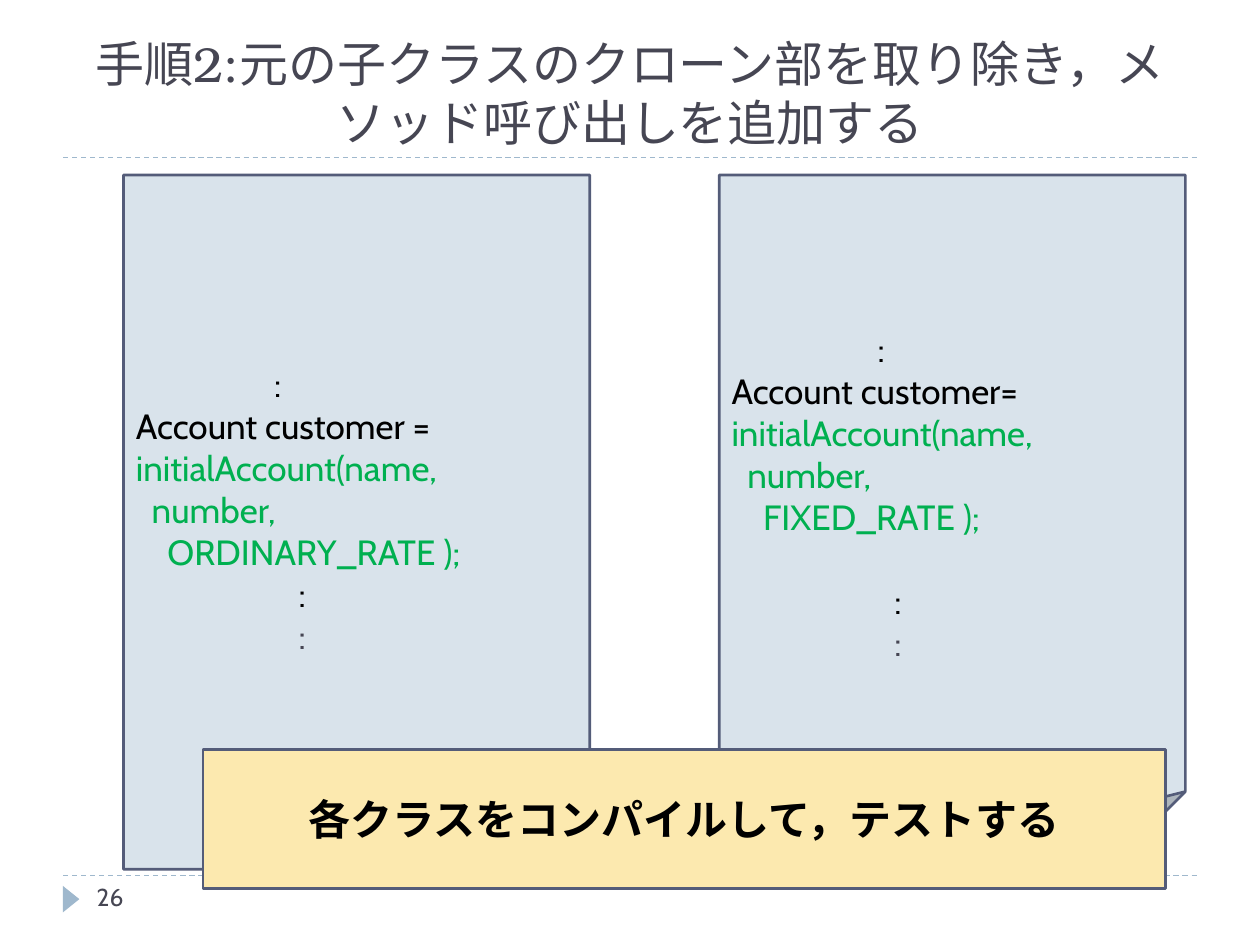
from dataclasses import dataclass

from lxml.etree import SubElement
from pptx import Presentation
from pptx.dml.color import RGBColor
from pptx.enum.dml import MSO_LINE
from pptx.enum.shapes import MSO_CONNECTOR, MSO_SHAPE
from pptx.enum.text import MSO_ANCHOR, PP_ALIGN
from pptx.oxml.ns import qn
from pptx.util import Pt


@dataclass(frozen=True)
class Theme:
    heading_font: str = "TeX Gyre Bonum"
    body_font: str = "Cabin"
    title_size: int = 28
    banner_size: int = 24
    code_size: int = 20
    number_size: int = 14
    text: str = "464653"
    black: str = "000000"
    call: str = "00B050"
    accent: str = "9FB8CD"
    border: str = "545C79"
    note: str = "D9E3EB"
    banner: str = "FCE9AF"


T = Theme()


def add_text(p, text, size=T.code_size, color=T.black, font=T.body_font,
             bold=False, align=PP_ALIGN.LEFT, indent=0, before=0):
    p.alignment = align
    p.space_before = Pt(before)
    if indent:
        pPr = p._p.get_or_add_pPr()
        pPr.set("marL", str(Pt(indent)))
        pPr.set("indent", "0")
    r = p.add_run()
    r.text = text
    r.font.name = font
    r.font.size = Pt(size)
    r.font.bold = bold
    r.font.color.rgb = RGBColor.from_string(color)


def add_box(s, kind, box, fill, line=None):
    sp = s.shapes.add_shape(kind, *map(Pt, box))
    sp.shadow.inherit = False
    sp.fill.solid()
    sp.fill.fore_color.rgb = RGBColor.from_string(fill)
    if line:
        sp.line.color.rgb = RGBColor.from_string(line)
        sp.line.width = Pt(1.5)
    else:
        sp.line.fill.background()
    sp.text_frame.word_wrap = True
    return sp


def add_rule(s, left, y, width):
    c = s.shapes.add_connector(MSO_CONNECTOR.STRAIGHT,
                               Pt(left), Pt(y), Pt(left + width), Pt(y))
    c.line.color.rgb = RGBColor.from_string(T.accent)
    c.line.width = Pt(0.75)
    c.line.dash_style = MSO_LINE.DASH
    SubElement(c._element.spPr, qn("a:effectLst"))


def add_title(s, box, text):
    left, top, width, height = box
    add_rule(s, left, top + height, width)
    sp = s.shapes.title
    sp.left, sp.top, sp.width, sp.height = map(Pt, box)
    tf = sp.text_frame
    tf.word_wrap = True
    tf.vertical_anchor = MSO_ANCHOR.BOTTOM
    add_text(tf.paragraphs[0], text, size=T.title_size, color=T.text,
             font=T.heading_font, align=PP_ALIGN.CENTER)


def add_footer(s, box, number):
    left, top, width, height = box
    add_rule(s, left, top, width)
    marker = add_box(s, MSO_SHAPE.ISOSCELES_TRIANGLE,
                     (left - 2.9, top + 8.7, 15.1, 9.4), T.accent)
    marker.rotation = 90
    tf = s.shapes.add_textbox(Pt(left + 12.2), Pt(top), Pt(156), Pt(height)).text_frame
    tf.word_wrap = True
    add_text(tf.paragraphs[0], number, size=T.number_size, color=T.text)


def add_code_note(s, box, text_top, declaration, rate, dots_indent, dots_gap):
    tf = add_box(s, MSO_SHAPE.FOLDED_CORNER, box, T.note, T.border).text_frame
    tf.vertical_anchor = MSO_ANCHOR.TOP
    tf.margin_top = Pt(text_top)
    lines = [
        (":", dict(indent=dots_indent)),
        (declaration, {}),
        ("initialAccount(name,", dict(color=T.call)),
        ("number,", dict(color=T.call, indent=9)),
        (f"{rate} );", dict(color=T.call, indent=18)),
        (":", dict(indent=93, before=dots_gap)),
        (":", dict(color=T.text, indent=93)),
    ]
    for i, (text, style) in enumerate(lines):
        p = tf.add_paragraph() if i else tf.paragraphs[0]
        add_text(p, text, **style)


def add_banner(s, box, text):
    tf = add_box(s, MSO_SHAPE.RECTANGLE, box, T.banner, T.border).text_frame
    tf.vertical_anchor = MSO_ANCHOR.MIDDLE
    add_text(tf.paragraphs[0], text, size=T.banner_size, bold=True,
             align=PP_ALIGN.CENTER)


def main():
    prs = Presentation()
    prs.slide_width, prs.slide_height = Pt(720), Pt(540)
    s = prs.slides.add_slide(prs.slide_layouts[5])
    add_title(s, (36, 18, 648, 72),
              "手順2:元の子クラスのクローン部を取り除き，メソッド呼び出しを追加する")
    add_footer(s, (36, 500.4, 648, 28.8), "26")
    add_code_note(s, (70.6, 100, 266.4, 396.7), 107,
                  "Account customer =", "ORDINARY_RATE", 79, 0)
    add_code_note(s, (411, 100, 266.4, 396.7), 87,
                  "Account customer=", "FIXED_RATE", 83.5, 24)
    add_banner(s, (116, 428.4, 550, 79.2), "各クラスをコンパイルして，テストする")
    prs.save("out.pptx")


if __name__ == "__main__":
    main()
